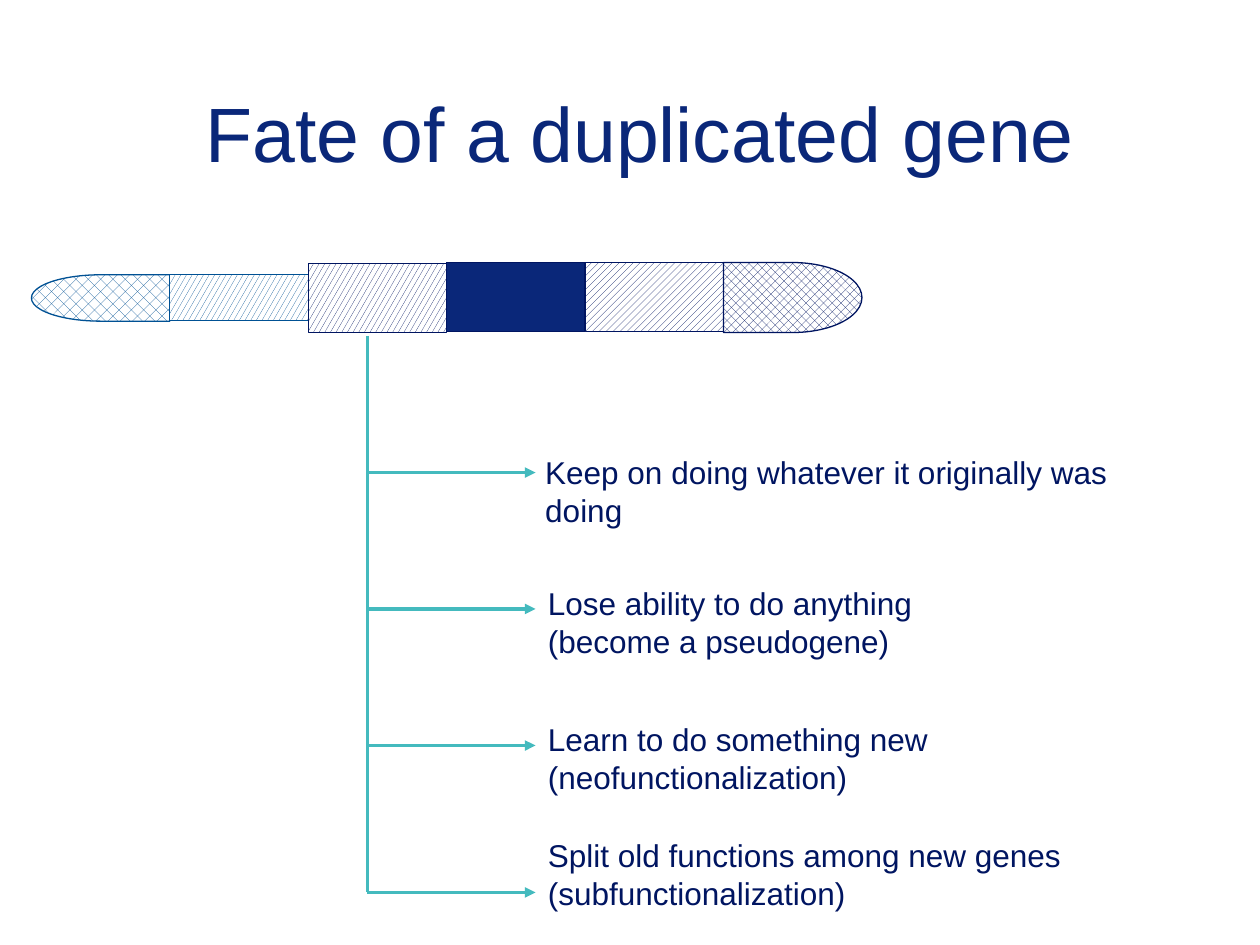
"""Build a slide on the possible fates of a duplicated gene."""
import lxml.etree
import pptx
import pptx.dml.color
import pptx.enum.dml
import pptx.enum.shapes
import pptx.enum.text
import pptx.oxml.ns
import pptx.util

Pt = pptx.util.Pt
PATTERN = pptx.enum.dml.MSO_PATTERN
SHAPE = pptx.enum.shapes.MSO_SHAPE
NAVY, DARK, BLUE, TEAL, WHITE = "0A2779", "001561", "005194", "44BABE", "FFFFFF"


def color(value):
    return pptx.dml.color.RGBColor.from_string(value)


class SlideBuilder:
    font = "Arial"

    def __init__(self, slide):
        self.slide = slide

    def format_text(self, frame, size, text_color):
        for paragraph in frame.paragraphs:
            for run in paragraph.runs:
                run.font.name = self.font
                run.font.size = Pt(size)
                run.font.color.rgb = color(text_color)

    def title(self, text, left, top, width, height):
        shape = self.slide.shapes.title
        shape.left, shape.top, shape.width, shape.height = map(Pt, (left, top, width, height))
        frame = shape.text_frame
        frame.text = text
        frame.vertical_anchor = pptx.enum.text.MSO_ANCHOR.MIDDLE
        frame.paragraphs[0].alignment = pptx.enum.text.PP_ALIGN.CENTER
        self.format_text(frame, 44, NAVY)

    def segment(self, kind, left, top, width, height, shade, pattern=None, flipped=False):
        shape = self.slide.shapes.add_shape(kind, *map(Pt, (left, top, width, height)))
        shape.shadow.inherit = False
        if pattern is None:
            shape.fill.solid()
            shape.fill.fore_color.rgb = color(NAVY)
        else:
            shape.fill.patterned()
            shape.fill.pattern = pattern
            shape.fill.fore_color.rgb = color(shade)
            shape.fill.back_color.rgb = color(WHITE)
        shape.line.color.rgb = color(shade)
        shape.line.width = Pt(0.75)
        if flipped:
            shape._element.spPr.xfrm.set("flipH", "1")

    def line(self, start, end, arrow=False):
        connector = self.slide.shapes.add_connector(
            pptx.enum.shapes.MSO_CONNECTOR.STRAIGHT, *map(Pt, start + end))
        connector.line.color.rgb = color(TEAL)
        connector.line.width = Pt(2)
        qn = pptx.oxml.ns.qn
        if arrow:
            outline = connector.line._get_or_add_ln()
            lxml.etree.SubElement(outline, qn("a:tailEnd"), type="triangle")
        lxml.etree.SubElement(connector._element.spPr, qn("a:effectLst"))

    def label(self, text, left, top, width, height):
        frame = self.slide.shapes.add_textbox(*map(Pt, (left, top, width, height))).text_frame
        frame.word_wrap = True
        frame.auto_size = pptx.enum.text.MSO_AUTO_SIZE.SHAPE_TO_FIT_TEXT
        frame.text = text
        self.format_text(frame, 18, DARK)


def main():
    presentation = pptx.Presentation()
    presentation.slide_width, presentation.slide_height = Pt(720), Pt(540)
    builder = SlideBuilder(presentation.slides.add_slide(presentation.slide_layouts[5]))
    builder.title("Fate of a duplicated gene", 60, 30, 612, 90)

    segments = [
        (SHAPE.FLOWCHART_DELAY, 157, 26.5, BLUE, PATTERN.PERCENT_30, True),
        (SHAPE.RECTANGLE, 157, 26, BLUE, PATTERN.LARGE_CONFETTI),
        (SHAPE.RECTANGLE, 150.5, 39.5, DARK, PATTERN.LARGE_CONFETTI),
        (SHAPE.RECTANGLE, 150, 39.5, DARK),
        (SHAPE.RECTANGLE, 150, 39.5, DARK, PATTERN.WIDE_UPWARD_DIAGONAL),
        (SHAPE.FLOWCHART_DELAY, 150, 40, DARK, PATTERN.PERCENT_50),
    ]
    segment_width = 79.1
    for index, (kind, top, height, *style) in enumerate(segments):
        builder.segment(kind, 18 + index * segment_width, top, segment_width, height, *style)

    fates = [
        (270, 304.5, 255.5, "Keep on doing whatever it originally was doing"),
        (348, 306, 330, "Lose ability to do anything\n(become a pseudogene)"),
        (426, 306, 408, "Learn to do something new (neofunctionalization)"),
        (510, 306, 474, "Split old functions among new genes (subfunctionalization)"),
    ]
    trunk, branch_top = 210, 192
    for branch, left, top, text in fates:
        builder.line((trunk, branch_top), (trunk, branch))
        builder.line((trunk, branch), (306, branch), arrow=True)
        builder.label(text, left, top, 379.5, 51)
        branch_top = branch

    presentation.save("out.pptx")


if __name__ == "__main__":
    main()
